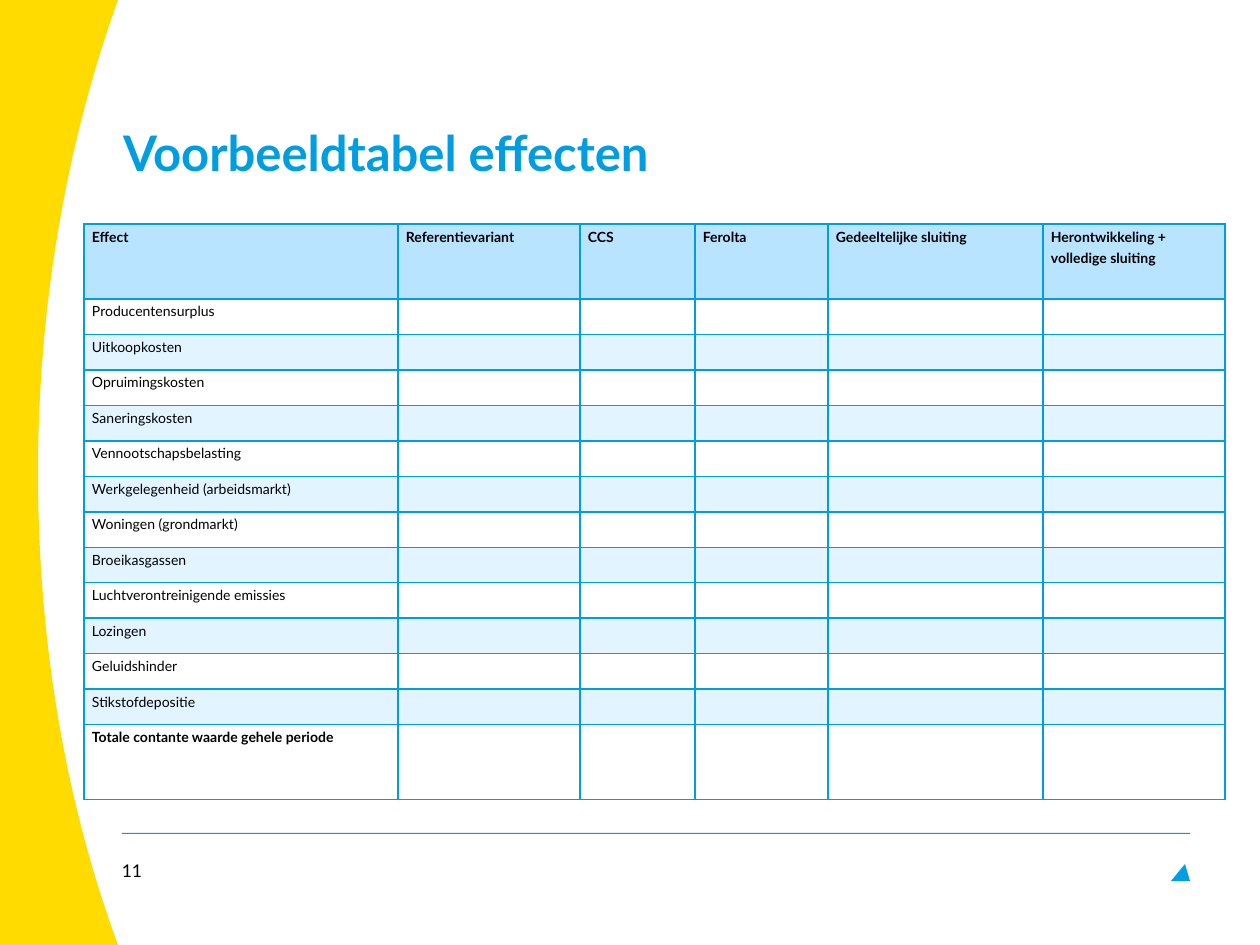
from lxml import etree
from pptx import Presentation
from pptx.dml.color import RGBColor
from pptx.enum.shapes import MSO_SHAPE
from pptx.enum.text import MSO_ANCHOR, PP_ALIGN
from pptx.oxml.ns import qn
from pptx.util import Pt

RECTANGLE = MSO_SHAPE.RECTANGLE
TOP, BOTTOM = MSO_ANCHOR.TOP, MSO_ANCHOR.BOTTOM
LEFT, RIGHT = PP_ALIGN.LEFT, PP_ALIGN.RIGHT
SCALE = 914400 / 126
FONT = "Lato"
BLUE, LINE_BLUE, YELLOW, BLACK = "009EE0", "009DD8", "FFDB00", "000000"
HEADER_FILL, BAND_FILL = "B9E4FF", "E1F4FF"
COLUMN_WIDTHS = [314, 182, 115, 133, 215, 182]
TALL_ROW = 75
HEADERS = ["Effect", "Referentievariant", "CCS", "Ferolta",
           "Gedeeltelijke sluiting", "Herontwikkeling + volledige sluiting"]
EFFECTS = ["Producentensurplus", "Uitkoopkosten", "Opruimingskosten",
           "Saneringskosten", "Vennootschapsbelasting",
           "Werkgelegenheid (arbeidsmarkt)", "Woningen (grondmarkt)",
           "Broeikasgassen", "Luchtverontreinigende emissies", "Lozingen",
           "Geluidshinder", "Stikstofdepositie"]
TOTAL = "Totale contante waarde gehele periode"


def px(length):
    """Turn px into EMU."""
    return round(length * SCALE)


def color(value):
    """Turn a hex string into a colour."""
    return RGBColor.from_string(value)


def paint(shape, fill):
    """Give a shape a plain fill without line or shadow."""
    shape.shadow.inherit = False
    shape.fill.solid()
    shape.fill.fore_color.rgb = color(fill)
    shape.line.fill.background()


def format_text(paragraph, size, fill=BLACK, bold=False, align=LEFT):
    """Set the alignment of a paragraph and the font of its runs."""
    paragraph.alignment = align
    for run in paragraph.runs:
        run.font.name = FONT
        run.font.size = Pt(size)
        run.font.bold = bold
        run.font.color.rgb = color(fill)


def clear_margins(text_frame):
    """Remove the inner margins of a text frame."""
    text_frame.margin_left = text_frame.margin_right = 0
    text_frame.margin_top = text_frame.margin_bottom = 0
    text_frame.word_wrap = True


def add_outline(slide, points, fill):
    """Draw a closed filled outline through px points."""
    corners = [(px(x), px(y)) for x, y in points]
    builder = slide.shapes.build_freeform(*corners[0])
    builder.add_line_segments(corners[1:], close=True)
    paint(builder.convert_to_shape(), fill)


def bezier(start, first, second, end, steps=24):
    """Return points along a cubic curve, without its start."""
    times = [step / steps for step in range(1, steps + 1)]
    return [tuple((1 - t) ** 3 * a + 3 * (1 - t) ** 2 * t * b
                  + 3 * (1 - t) * t ** 2 * c + t ** 3 * d
                  for a, b, c, d in zip(start, first, second, end))
            for t in times]


def add_side_band(slide, left, top, width, height):
    """Draw the yellow band with its curved right edge."""
    right, bottom = left + width, top + height
    middle = (left + 38, top + height // 2)
    points = [(right, top), (left, top), (left, bottom), (right, bottom)]
    points += bezier((right, bottom), (right - 52, bottom - 141),
                     (middle[0], bottom - 301), middle)
    points += bezier(middle, (middle[0], top + 304),
                     (right - 51, top + 142), (right, top))
    add_outline(slide, points, YELLOW)


def add_title(slide, left, top, width, height):
    """Place and format the slide title."""
    title = slide.shapes.title
    title.left, title.top = px(left), px(top)
    title.width, title.height = px(width), px(height)
    frame = title.text_frame
    clear_margins(frame)
    frame.vertical_anchor = BOTTOM
    frame.text = "Voorbeeldtabel effecten"
    format_text(frame.paragraphs[0], 28, BLUE, True)


def add_borders(cell):
    """Draw a thin blue line on each side of a cell."""
    properties = cell._tc.get_or_add_tcPr()
    for side in ("a:lnL", "a:lnR", "a:lnT", "a:lnB"):
        line = etree.SubElement(properties, qn(side), w=str(Pt(1)))
        solid = etree.SubElement(line, qn("a:solidFill"))
        etree.SubElement(solid, qn("a:srgbClr"), val=BLUE)


def fill_cell(cell, text, fill, bold):
    """Write and format one table cell."""
    cell.margin_left = cell.margin_right = px(8)
    cell.margin_top = cell.margin_bottom = 0
    cell.vertical_anchor = TOP
    add_borders(cell)
    if fill:
        cell.fill.solid()
        cell.fill.fore_color.rgb = color(fill)
    else:
        cell.fill.background()
    paragraph = cell.text_frame.paragraphs[0]
    paragraph.line_spacing = Pt(12)
    if text:
        paragraph.text = text
        format_text(paragraph, 8, bold=bold)
    else:
        etree.SubElement(paragraph._p, qn("a:endParaRPr"), sz="800")


def add_effects_table(slide, left, top, width, height):
    """Build the table of effects by variant."""
    blanks = [""] * (len(HEADERS) - 1)
    rows = [HEADERS] + [[label] + blanks for label in EFFECTS + [TOTAL]]
    last = len(rows) - 1
    body_row = (height - 2 * TALL_ROW) / len(EFFECTS)
    table = slide.shapes.add_table(len(rows), len(HEADERS), px(left), px(top),
                                   px(width), px(height)).table
    for column, column_width in zip(table.columns, COLUMN_WIDTHS):
        column.width = px(column_width)
    for index, texts in enumerate(rows):
        outer = index in (0, last)
        table.rows[index].height = px(TALL_ROW if outer else body_row)
        band = BAND_FILL if index % 2 == 0 else None
        fill = HEADER_FILL if index == 0 else band
        for column, text in enumerate(texts):
            fill_cell(table.cell(index, column), text, fill, outer)


def add_footer(slide, left, top, width, height):
    """Draw the rule, the slide number and the corner triangle."""
    rule = slide.shapes.add_shape(RECTANGLE, px(left), px(top), px(width), px(1))
    paint(rule, LINE_BLUE)
    number = slide.shapes.add_textbox(px(left - 21), px(top + 27), px(41), px(30))
    clear_margins(number.text_frame)
    number.text_frame.text = "11"
    format_text(number.text_frame.paragraphs[0], 10, align=RIGHT)
    right, bottom = left + width, top + height
    add_outline(slide, [(right - 5, bottom - 17), (right - 19, bottom),
                        (right, bottom)], "009FE3")


def main():
    """Build and save the slide."""
    presentation = Presentation()
    presentation.slide_width, presentation.slide_height = px(1260), px(945)
    slide = presentation.slides.add_slide(presentation.slide_layouts[5])
    add_side_band(slide, 0, 0, 118, 945)
    add_title(slide, 123, 65, 1062, 116)
    add_effects_table(slide, 84, 224, sum(COLUMN_WIDTHS), 576)
    add_footer(slide, 122, 833, 1068, 48)
    presentation.save("out.pptx")


if __name__ == "__main__":
    main()
